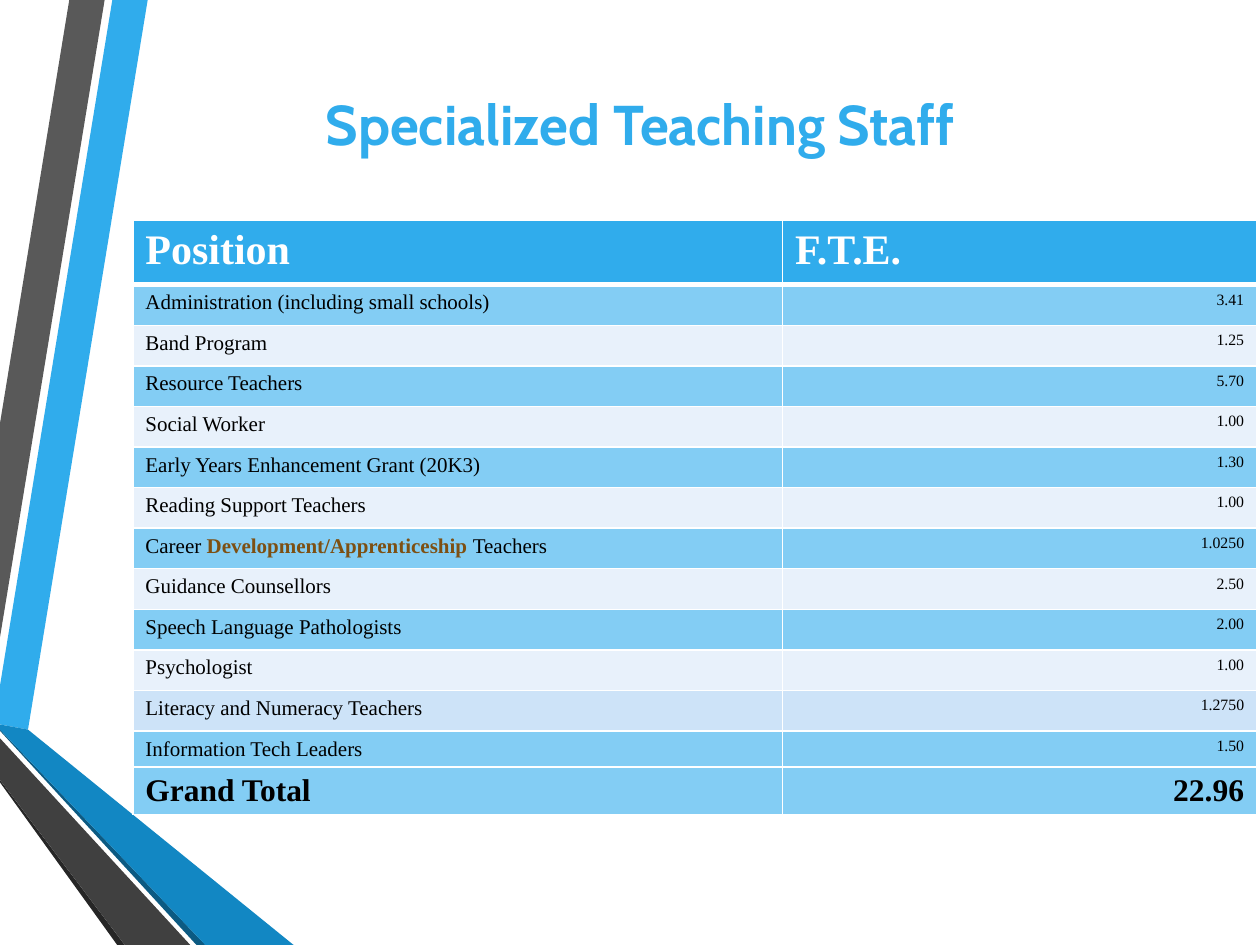
from lxml.etree import SubElement
from pptx import Presentation
from pptx.dml.color import RGBColor
from pptx.enum.text import MSO_ANCHOR, PP_ALIGN
from pptx.oxml.ns import qn
from pptx.util import Pt

COLORS = {
    "blue": "30ACEC", "gray": "595959", "black": "000000", "white": "FFFFFF",
    "shadow gray": "262626", "shadow blue": "0C5A82",
    "deep blue": "1287C3", "dark gray": "404040",
    "band dark": "83CDF4", "band light": "E8F1FB", "band middle": "CDE3F8",
    "brown": "7D5013",
}


def add_run(paragraph, text, color, **font_values):
    run = paragraph.add_run()
    run.text = text
    run.font.color.rgb = RGBColor.from_string(COLORS[color])
    for name, value in font_values.items():
        setattr(run.font, name, value)


def add_border(cell, side, width):
    line = SubElement(cell._tc.get_or_add_tcPr(), qn(f"a:{side}"), w=str(Pt(width)))
    fill = SubElement(line, qn("a:solidFill"))
    SubElement(fill, qn("a:srgbClr"), val=COLORS["white"])


presentation = Presentation()
presentation.slide_width, presentation.slide_height = Pt(720), Pt(540)
slide = presentation.slides.add_slide(presentation.slide_layouts[6])

# Folded ribbons along the left edge, points in order from back to front
ribbons = [
    ("blue", [(0, 391.7), (0, 414), (16, 416.9), (84.4, 0), (64.2, 0)]),
    ("gray", [(59.8, 0), (39.6, 0), (0, 242), (0, 364.3)]),
    ("shadow gray", [(0, 445.7), (0, 447.1), (67, 540), (71.3, 540)]),
    ("shadow blue", [(0, 416.9), (0, 417.6), (112.3, 540), (117.4, 540)]),
    ("deep blue", [(0, 416.9), (117.4, 540), (167.8, 540), (16, 416.9), (0, 414)]),
    ("dark gray", [(0, 445.7), (71.3, 540), (108.7, 540), (0, 421.9)]),
]
for color, points in ribbons:
    corners = [(Pt(x), Pt(y)) for x, y in points]
    builder = slide.shapes.build_freeform(*corners[0])
    builder.add_line_segments(corners[1:], close=True)
    ribbon = builder.convert_to_shape()
    ribbon.shadow.inherit = False
    ribbon.fill.solid()
    ribbon.fill.fore_color.rgb = RGBColor.from_string(COLORS[color])
    ribbon.line.fill.background()

title = slide.shapes.add_textbox(Pt(42), Pt(54), Pt(648), Pt(32.4))
title.text_frame.word_wrap = True
title.text_frame.vertical_anchor = MSO_ANCHOR.MIDDLE
title_paragraph = title.text_frame.paragraphs[0]
title_paragraph.alignment = PP_ALIGN.CENTER
add_run(title_paragraph, "Specialized Teaching Staff", "blue",
        name="Cabin", size=Pt(32), bold=True)

positions = [
    ("Administration (including small schools)", "3.41"),
    ("Band Program", "1.25"),
    ("Resource Teachers", "5.70"),
    ("Social Worker", "1.00"),
    ("Early Years Enhancement Grant (20K3)", "1.30"),
    ("Reading Support Teachers", "1.00"),
    ("Career |Development/Apprenticeship |Teachers", "1.0250"),
    ("Guidance Counsellors", "2.50"),
    ("Speech Language Pathologists", "2.00"),
    ("Psychologist", "1.00"),
    ("Literacy and Numeracy Teachers", "1.2750"),
    ("Information Tech Leaders", "1.50"),
]
rows = [("Position", "F.T.E."), *positions, ("Grand Total", "22.96")]
total_row = len(rows) - 1
row_heights = [36.7] + [23.2] * (len(positions) - 1) + [20.6, 26.4]
fills = ["blue"] + ["band dark", "band light"] * 5 + ["band middle", "band dark", "band dark"]
cell_format = {"margin_left": Pt(7.2), "margin_right": Pt(7.2),
               "margin_top": Pt(3.6), "margin_bottom": Pt(1.8)}

table = slide.shapes.add_table(len(rows), 2, Pt(75.9), Pt(126), Pt(642.2),
                               Pt(sum(row_heights))).table
for column, width in zip(table.columns, (371.2, 271)):
    column.width = Pt(width)

for row_index, (values, height) in enumerate(zip(rows, row_heights)):
    table.rows[row_index].height = Pt(height)
    is_header = row_index == 0
    is_total = row_index == total_row
    for column_index, text in enumerate(values):
        cell = table.cell(row_index, column_index)
        for name, value in cell_format.items():
            setattr(cell, name, value)
        for side in ("lnL", "lnR", "lnT", "lnB"):
            under_header = (row_index, side) in ((0, "lnB"), (1, "lnT"))
            add_border(cell, side, 3 if under_header else 1)
        cell.fill.solid()
        cell.fill.fore_color.rgb = RGBColor.from_string(COLORS[fills[row_index]])

        paragraph = cell.text_frame.paragraphs[0]
        if column_index == 1 and not is_header:
            paragraph.alignment = PP_ALIGN.RIGHT
        size = 24 if is_header else 18 if is_total else (12, 9)[column_index]
        # Bars split a label so that its middle part is highlighted
        for part_index, part in enumerate(text.split("|")):
            highlighted = part_index == 1
            color = "white" if is_header else "brown" if highlighted else "black"
            add_run(paragraph, part, color, name="Times New Roman", size=Pt(size),
                    bold=is_header or is_total or highlighted)

presentation.save("out.pptx")
